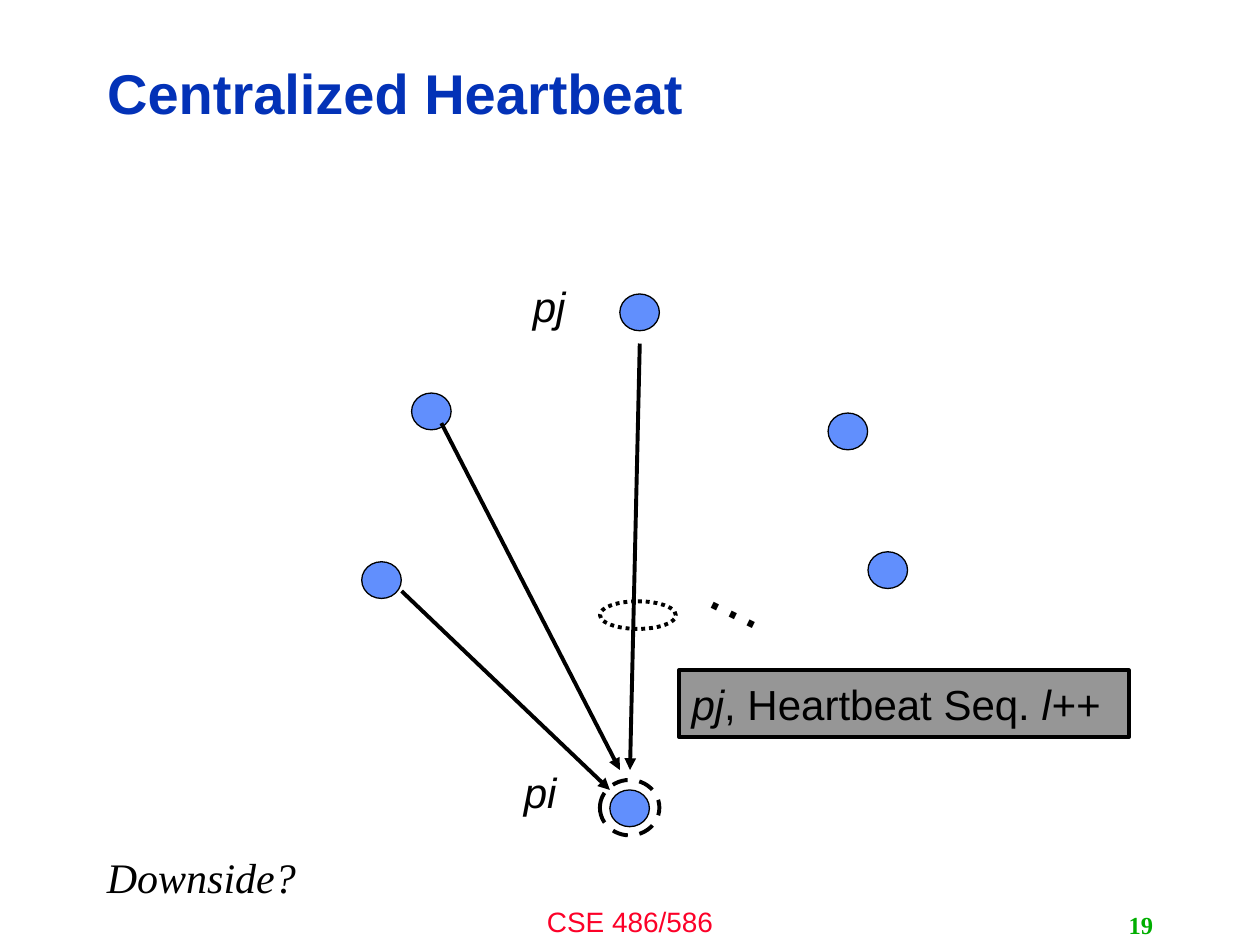
import pptx
import pptx.util
import pptx.dml.color
import pptx.enum.dml
import pptx.enum.shapes
import pptx.enum.text
import pptx.oxml.ns
import lxml.etree

Pt = pptx.util.Pt
DASH = pptx.enum.dml.MSO_LINE
SHAPE = pptx.enum.shapes.MSO_SHAPE
ALIGN = pptx.enum.text.PP_ALIGN
ANCHOR = pptx.enum.text.MSO_ANCHOR
BLACK = "000000"
BLUE = "618FFD"


def color(code):
    return pptx.dml.color.RGBColor.from_string(code)


def place(shape, box):
    shape.left, shape.top, shape.width, shape.height = [Pt(n) for n in box]


def style(para, size, font="Arial", code=BLACK, bold=False, italic=False):
    for run in para.runs:
        run.font.size = Pt(size)
        run.font.name = font
        run.font.color.rgb = color(code)
        run.font.bold = bold
        run.font.italic = italic


def add_text(slide, box, text, size, align=ALIGN.LEFT, wrap=False, turn=0, **look):
    shape = slide.shapes.add_textbox(*[Pt(n) for n in box])
    shape.rotation = turn
    frame = shape.text_frame
    frame.word_wrap = wrap
    frame.text = text
    frame.paragraphs[0].alignment = align
    style(frame.paragraphs[0], size, **look)
    return shape


def add_form(slide, kind, box, fill=None, width=2.25, dash=None, turn=0):
    shape = slide.shapes.add_shape(kind, *[Pt(n) for n in box])
    shape.shadow.inherit = False
    shape.rotation = turn
    if fill:
        shape.fill.solid()
        shape.fill.fore_color.rgb = color(fill)
    else:
        shape.fill.background()
    shape.line.color.rgb = color(BLACK)
    shape.line.width = Pt(width)
    if dash:
        shape.line.dash_style = dash
    return shape


def add_arrow(slide, start, end):
    ends = [Pt(n) for n in start + end]
    arrow = slide.shapes.add_connector(pptx.enum.shapes.MSO_CONNECTOR.STRAIGHT, *ends)
    arrow.line.color.rgb = color(BLACK)
    arrow.line.width = Pt(2.25)
    qn = pptx.oxml.ns.qn
    lxml.etree.SubElement(arrow.line._get_or_add_ln(), qn("a:tailEnd"), type="triangle")
    lxml.etree.SubElement(arrow._element.spPr, qn("a:effectLst"))


def add_title(slide, text):
    title = slide.shapes.title
    place(title, (54, 26, 574.5, 58.3))
    frame = title.text_frame
    frame.text = text
    frame.vertical_anchor = ANCHOR.MIDDLE
    para = frame.paragraphs[0]
    para.alignment = ALIGN.LEFT
    para.line_spacing = 0.9
    style(para, 32, code="0332B7", bold=True)


def add_label(slide):
    shape = add_form(slide, SHAPE.RECTANGLE, (388.1, 383, 257, 38.2), "969696")
    frame = shape.text_frame
    frame.word_wrap = True
    frame.vertical_anchor = ANCHOR.MIDDLE
    para = frame.paragraphs[0]
    para.alignment = ALIGN.LEFT
    for text in ("pj", ", Heartbeat Seq. ", "l++"):
        para.add_run().text = text
    style(para, 24, italic=True)
    para.runs[1].font.italic = False


def main():
    deck = pptx.Presentation()
    deck.slide_width, deck.slide_height = Pt(720), Pt(540)
    slide = deck.slides.add_slide(deck.slide_layouts[5])

    # Footer, title and page number
    add_text(slide, (240, 513.4, 240, 26.6), "CSE 486/586", 16,
             ALIGN.CENTER, True, code="FC0128")
    add_title(slide, "Centralized Heartbeat")
    page = add_text(slide, (516, 517, 150, 23), "19", 14, ALIGN.RIGHT, True,
                    font="Times New Roman", code="00AE00", bold=True)
    page.text_frame.vertical_anchor = ANCHOR.MIDDLE

    # Processes, the last one being the centre
    for left, top in ((473.2, 236), (235.2, 224.6), (206.7, 321),
                      (496, 315.3), (354.2, 168), (348.5, 451.4)):
        add_form(slide, SHAPE.OVAL, (left, top, 22.6, 21), BLUE, 0.75)

    # Heartbeats to the centre
    for start, end in (((229.5, 337.8), (348.5, 451.4)),
                       ((252.2, 241.8), (354.2, 440)),
                       ((365.6, 196.3), (360, 440))):
        add_arrow(slide, start, end)
    add_text(slide, (399.6, 315.4, 50.4, 50.4), "…", 36, turn=26.2)

    # Message and the rings
    add_label(slide)
    add_form(slide, SHAPE.OVAL, (356.6, 329.8, 15.8, 43.4), dash=DASH.ROUND_DOT, turn=90)
    add_form(slide, SHAPE.OVAL, (342.8, 445.7, 34, 31.7), dash=DASH.DASH)

    # Names and question
    add_text(slide, (297.4, 157, 33.1, 36), "pj", 24, italic=True)
    add_text(slide, (292.3, 434.2, 33.1, 36), "pi", 24, italic=True)
    add_text(slide, (54, 483.1, 122.4, 36), "Downside?", 24,
             font="Times New Roman", italic=True)
    deck.save("out.pptx")


if __name__ == "__main__":
    main()
